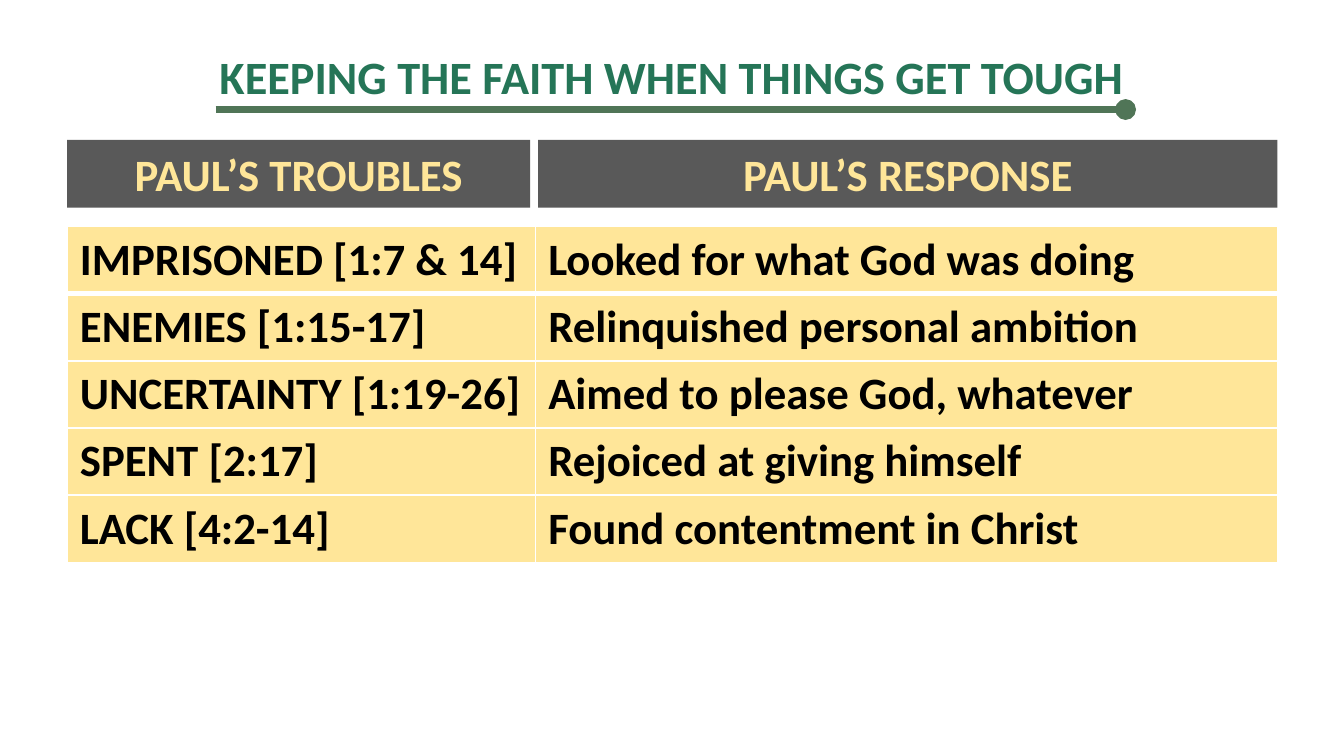
"""Build a slide that pairs Paul's troubles with his responses."""
import lxml.etree
import pptx
import pptx.dml.color
import pptx.enum.shapes
import pptx.enum.text
import pptx.oxml
import pptx.oxml.ns
import pptx.util

PX = 4572
COLORS = {
    "title": "257557",
    "rule": "507557",
    "header": "595959",
    "cream": "FFE699",
    "text": "000000",
    "border": "FFFFFF",
}
HEADERS = [("PAUL’S TROUBLES", 100, 689), ("PAUL’S RESPONSE", 801, 1100)]
ROWS = [
    ("IMPRISONED [1:7 & 14]", "Looked for what God was doing"),
    ("ENEMIES [1:15-17]", "Relinquished personal ambition"),
    ("UNCERTAINTY [1:19-26]", "Aimed to please God, whatever"),
    ("SPENT [2:17]", "Rejoiced at giving himself"),
    ("LACK [4:2-14]", "Found contentment in Christ"),
]
COLUMN_WIDTHS = [697, 1104]
ROW_HEIGHT = 100
MIDDLE = pptx.enum.text.MSO_ANCHOR.MIDDLE
CENTER = pptx.enum.text.PP_ALIGN.CENTER


def rgb(name):
    return pptx.dml.color.RGBColor.from_string(COLORS[name])


def style(para, size, color):
    para.font.name = "Calibri"
    para.font.size = pptx.util.Pt(size)
    para.font.bold = True
    para.font.color.rgb = rgb(color)


deck = pptx.Presentation()
deck.slide_width = 2000 * PX
deck.slide_height = 1125 * PX
slide = deck.slides.add_slide(deck.slide_layouts[5])

title = slide.shapes.title
title.left, title.top, title.width, title.height = [n * PX for n in (250, 51, 1500, 144)]
title.text_frame.text = "KEEPING THE FAITH WHEN THINGS GET TOUGH"
title.text_frame.vertical_anchor = MIDDLE
para = title.text_frame.paragraphs[0]
para.alignment = CENTER
para.line_spacing = 0.7
style(para, 24.8, "title")

rule = slide.shapes.add_connector(
    pptx.enum.shapes.MSO_CONNECTOR.STRAIGHT, 321 * PX, 163 * PX, 1675 * PX, 163 * PX
)
rule.line.color.rgb = rgb("rule")
rule.line.width = pptx.util.Pt(3.75)
line = rule.line._get_or_add_ln()
lxml.etree.SubElement(line, pptx.oxml.ns.qn("a:tailEnd"), type="oval")
lxml.etree.SubElement(rule._element.spPr, pptx.oxml.ns.qn("a:effectLst"))

for label, left, width in HEADERS:
    header = slide.shapes.add_shape(
        pptx.enum.shapes.MSO_SHAPE.RECTANGLE, left * PX, 208 * PX, width * PX, 101 * PX
    )
    header.shadow.inherit = False
    header.fill.solid()
    header.fill.fore_color.rgb = rgb("header")
    header.line.fill.background()
    header.text_frame.word_wrap = True
    header.text_frame.vertical_anchor = MIDDLE
    para = header.text_frame.paragraphs[0]
    para.text = label
    para.alignment = CENTER
    style(para, 24, "cream")

table = slide.shapes.add_table(
    len(ROWS), 2, 100 * PX, 337 * PX, sum(COLUMN_WIDTHS) * PX, len(ROWS) * ROW_HEIGHT * PX
).table
table.horz_banding = False
for column, width in zip(table.columns, COLUMN_WIDTHS):
    column.width = width * PX

for row, texts in enumerate(ROWS):
    table.rows[row].height = ROW_HEIGHT * PX
    for column, text in enumerate(texts):
        cell = table.cell(row, column)
        cell.margin_left = cell.margin_right = 19 * PX
        cell.margin_top = cell.margin_bottom = 8 * PX
        cell.vertical_anchor = MIDDLE
        properties = cell._tc.get_or_add_tcPr()
        for side in "LRTB":
            thick = (row, side) in [(0, "B"), (1, "T")]
            border = lxml.etree.SubElement(
                properties,
                pptx.oxml.ns.qn(f"a:ln{side}"),
                w=str(pptx.util.Pt(3 if thick else 1)),
            )
            fill = lxml.etree.SubElement(border, pptx.oxml.ns.qn("a:solidFill"))
            lxml.etree.SubElement(fill, pptx.oxml.ns.qn("a:srgbClr"), val=COLORS["border"])
        cell.fill.solid()
        cell.fill.fore_color.rgb = rgb("cream")
        cell.text = text
        style(cell.text_frame.paragraphs[0], 24, "text")

deck.save("out.pptx")
